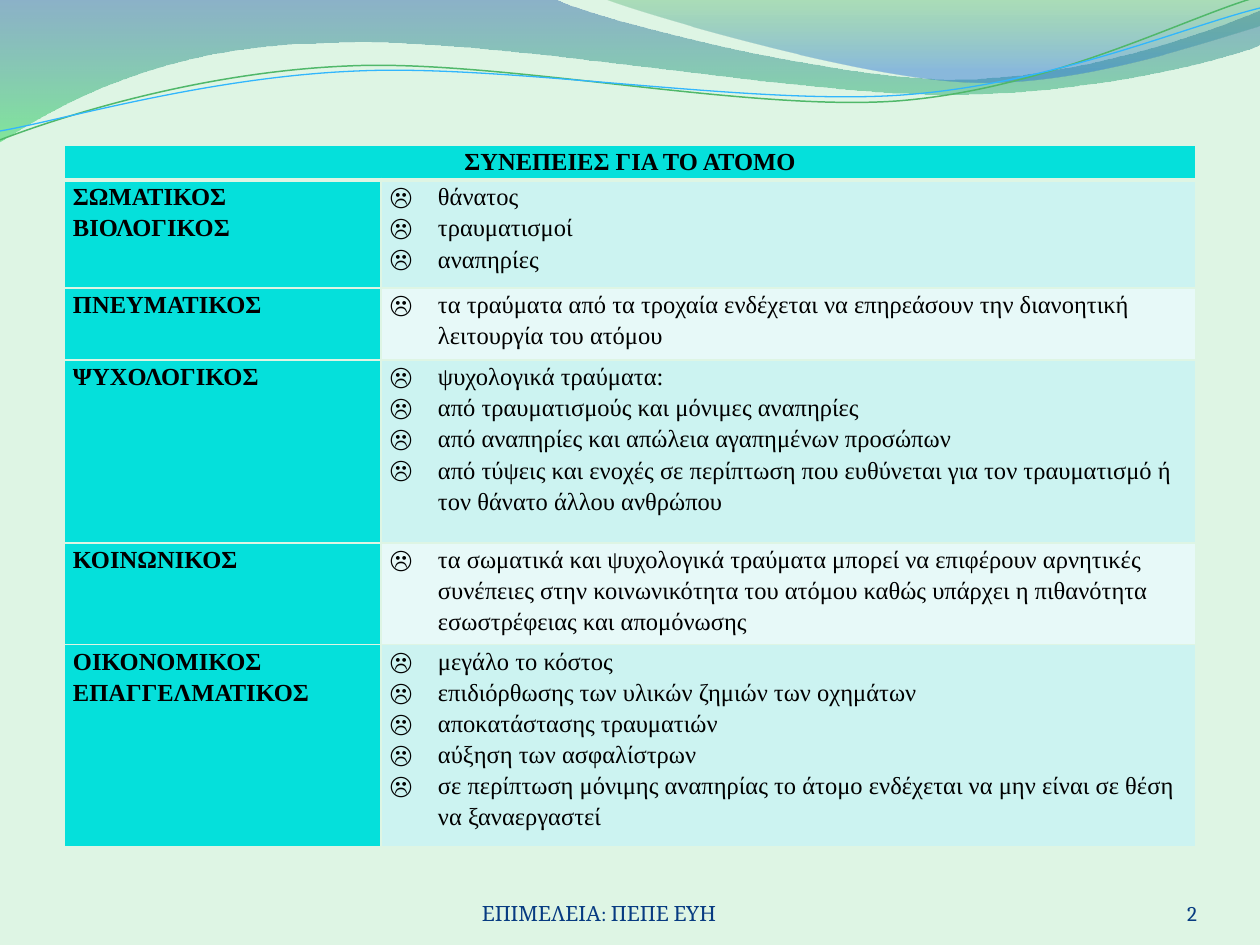
from math import cos, radians, sin

from lxml.etree import Element, SubElement
from pptx import Presentation
from pptx.dml.color import RGBColor
from pptx.enum.text import MSO_ANCHOR as Anchor, PP_ALIGN as Align
from pptx.oxml import parse_xml
from pptx.oxml.ns import nsdecls, qn
from pptx.util import Inches, Pt

SCALE = Inches(10) / 1260
TILT = 2.7
COLORS = {
    "page": "DEF5E4", "label": "05E0DB", "odd": "CCF3F1", "even": "E7F9F8",
    "ink": "000000", "footer": "073B81", "green": "50B86A", "blue": "31B6FD",
}
HEADING = "ΣΥΝΕΠΕΙΕΣ ΓΙΑ ΤΟ ΑΤΟΜΟ"
COLUMNS = [317, 815]
HEADING_HEIGHT = 35
EFFECTS = [
    (108, ["ΣΩΜΑΤΙΚΟΣ", "ΒΙΟΛΟΓΙΚΟΣ"],
     ["θάνατος", "τραυματισμοί", "αναπηρίες"]),
    (72, ["ΠΝΕΥΜΑΤΙΚΟΣ"],
     ["τα τραύματα από τα τροχαία ενδέχεται να επηρεάσουν την διανοητική λειτουργία του ατόμου"]),
    (183, ["ΨΥΧΟΛΟΓΙΚΟΣ"],
     ["ψυχολογικά τραύματα:",
      "από τραυματισμούς και μόνιμες αναπηρίες",
      "από αναπηρίες και απώλεια αγαπημένων προσώπων",
      "από τύψεις και ενοχές σε περίπτωση που ευθύνεται για τον τραυματισμό ή τον θάνατο άλλου ανθρώπου"]),
    (58, ["ΚΟΙΝΩΝΙΚΟΣ"],
     ["τα σωματικά και ψυχολογικά τραύματα μπορεί να επιφέρουν αρνητικές συνέπειες στην "
      "κοινωνικότητα του ατόμου καθώς υπάρχει η πιθανότητα εσωστρέφειας και απομόνωσης"]),
    (168, ["ΟΙΚΟΝΟΜΙΚΟΣ ΕΠΑΓΓΕΛΜΑΤΙΚΟΣ"],
     ["μεγάλο το κόστος",
      "επιδιόρθωσης των υλικών ζημιών των οχημάτων",
      "αποκατάστασης τραυματιών",
      "αύξηση των ασφαλίστρων",
      "σε περίπτωση μόνιμης αναπηρίας το άτομο ενδέχεται να μην είναι σε θέση να ξαναεργαστεί"]),
]
WAVES = [
    ([(0, 0), (554, -1),
      (600, 21, 837, 79, 955, 79), (1075, 79, 1207, 33, 1260, 11), (1261, 45),
      (1239, 55, 1096, 96, 940, 94), (784, 94, 481, 35, 324, 43),
      (163, 45, 58, 105, -1, 142), (0, 0)],
     [(0, "2960A7", 45), (100, "35DA5E", 55)]),
    ([(604, -1), (641, 14, 859, 78, 969, 82),
      (1079, 87, 1211, 40, 1260, 26), (1260, 0), (604, -1)],
     [(0, "36A752", 30), (80, "2472D3", 45)]),
]
STRANDS = [
    ([(0, 140), (60, 117, 199, 72, 349, 66), (498, 59, 747, 112, 898, 101),
      (1050, 89, 1182, 19, 1257, -3)], (629, 72), "green", 0.85),
    ([(0, 131), (59, 121, 207, 77, 357, 71), (508, 64, 752, 106, 903, 95),
      (1053, 84, 1186, 26, 1260, 8)], (629, 74), "blue", 0.75),
]


def px(length):
    """Turn px into EMU."""
    return round(length * SCALE)


def rgb(name):
    """Look up a named colour."""
    return RGBColor.from_string(COLORS[name])


def set_all(target, values):
    """Set attributes from a dict of format values."""
    for name, value in values.items():
        setattr(target, name, value)


def turn(point, pivot, degrees):
    """Turn a point clockwise about a pivot."""
    angle = radians(degrees)
    dx, dy = point[0] - pivot[0], point[1] - pivot[1]
    return (pivot[0] + dx * cos(angle) - dy * sin(angle),
            pivot[1] + dx * sin(angle) + dy * cos(angle))


def add_outline(slide, segments, close, pivot=(0, 0), tilt=0):
    """Draw an outline of lines and cubic curves without shadow."""
    points = [turn(segment[i:i + 2], pivot, tilt)
              for segment in segments for i in range(0, len(segment), 2)]
    points = [(px(x), px(y)) for x, y in points]
    builder = slide.shapes.build_freeform(*points[0])
    builder.add_line_segments(points[1:], close=close)
    outline = builder.convert_to_shape()
    outline.shadow.inherit = False
    outline.fill.background()
    outline.rotation = -tilt % 360
    steps = iter(list(outline.element.iter(qn("a:lnTo"))))
    for segment in segments[1:]:
        first = next(steps)
        if len(segment) == 6:
            curve = Element(qn("a:cubicBezTo"))
            first.addprevious(curve)
            for step in (first, next(steps), next(steps)):
                curve.append(step[0])
                step.getparent().remove(step)
    return outline


def add_wave(slide, segments, stops):
    """Draw a wave with a translucent vertical gradient."""
    wave = add_outline(slide, segments, True)
    wave.line.fill.background()
    stop_xml = "".join(
        f'<a:gs pos="{pos * 1000}"><a:srgbClr val="{color}">'
        f'<a:alpha val="{alpha * 1000}"/></a:srgbClr></a:gs>'
        for pos, color, alpha in stops)
    gradient = parse_xml(
        f'<a:gradFill {nsdecls("a")} rotWithShape="1"><a:gsLst>{stop_xml}</a:gsLst>'
        '<a:lin ang="5400000" scaled="0"/></a:gradFill>')
    properties = wave.element.spPr
    properties.replace(properties.find(qn("a:noFill")), gradient)


def add_strand(slide, segments, pivot, color, width):
    """Draw a thin, slightly tilted curved line."""
    strand = add_outline(slide, segments, False, pivot, TILT)
    strand.line.color.rgb = rgb(color)
    strand.line.width = Pt(width)


def write(frame, lines, font, paragraph_format):
    """Write lines of text as paragraphs."""
    for index, line in enumerate(lines):
        paragraph = frame.paragraphs[0] if index == 0 else frame.add_paragraph()
        set_all(paragraph, paragraph_format)
        run = paragraph.add_run()
        run.text = line
        set_all(run.font, font)
        run.font.color.rgb = rgb("footer" if font["name"] == "Cambria" else "ink")
        paragraph_end = SubElement(paragraph._p, qn("a:endParaRPr"))
        paragraph_end.set("sz", str(round(font["size"].pt * 100)))
        SubElement(paragraph_end, qn("a:latin")).set("typeface", font["name"])


def add_footer(slide, text, box, align):
    """Add a bottom-anchored footer text."""
    frame = slide.shapes.add_textbox(*map(px, box)).text_frame
    set_all(frame, {"word_wrap": True, "vertical_anchor": Anchor.BOTTOM,
                    "margin_left": 0, "margin_right": 0,
                    "margin_top": 0, "margin_bottom": 0})
    write(frame, [text], {"name": "Cambria", "size": Pt(12)}, {"alignment": align})


def add_borders(cell, bottom=1):
    """Edge a cell in the page colour."""
    properties = cell._tc.get_or_add_tcPr()
    widths = {"lnL": 1, "lnR": 1, "lnT": 1, "lnB": bottom}
    for index, (side, width) in enumerate(widths.items()):
        properties.insert(index, parse_xml(
            f'<a:{side} {nsdecls("a")} w="{Pt(width)}"><a:solidFill>'
            f'<a:srgbClr val="{COLORS["page"]}"/></a:solidFill></a:{side}>'))


def fill_cell(cell, lines, color, bold=True, align=Align.LEFT, bottom=1):
    """Fill a table cell with text, colour and borders."""
    set_all(cell, {"margin_left": px(9), "margin_right": px(9),
                   "margin_top": 0, "margin_bottom": 0})
    cell.fill.solid()
    cell.fill.fore_color.rgb = rgb(color)
    write(cell.text_frame, lines,
          {"name": "Times New Roman", "size": Pt(14), "bold": bold},
          {"alignment": align, "line_spacing": 1.15})
    add_borders(cell, bottom)


def add_bullets(cell):
    """Give each paragraph a hanging sad-face bullet."""
    for paragraph in cell.text_frame.paragraphs:
        properties = paragraph._p.get_or_add_pPr()
        properties.set("marL", str(px(48)))
        properties.set("indent", str(-px(48)))
        SubElement(properties, qn("a:buFont")).set("typeface", "Times New Roman")
        SubElement(properties, qn("a:buChar")).set("char", "☹")


def add_effects_table(slide):
    """Build the table of effects on the person."""
    heights = [HEADING_HEIGHT] + [height for height, _, _ in EFFECTS]
    table = slide.shapes.add_table(
        len(heights), len(COLUMNS), px(64), px(145),
        px(sum(COLUMNS)), px(sum(heights))).table
    for column, width in zip(table.columns, COLUMNS):
        column.width = px(width)
    for row, height in zip(table.rows, heights):
        row.height = px(height)
    table.cell(0, 0).merge(table.cell(0, 1))
    fill_cell(table.cell(0, 0), [HEADING], "label", align=Align.CENTER, bottom=3)
    for row, (_, labels, effects) in enumerate(EFFECTS, 1):
        fill_cell(table.cell(row, 0), labels, "label")
        fill_cell(table.cell(row, 1), effects, "odd" if row % 2 else "even", bold=False)
        add_bullets(table.cell(row, 1))


def main():
    """Build and save the slide."""
    deck = Presentation()
    set_all(deck, {"slide_width": px(1260), "slide_height": px(945)})
    slide = deck.slides.add_slide(deck.slide_layouts[6])
    slide.background.fill.solid()
    slide.background.fill.fore_color.rgb = rgb("page")
    for wave in WAVES:
        add_wave(slide, *wave)
    for strand in STRANDS:
        add_strand(slide, *strand)
    add_footer(slide, "ΕΠΙΜΕΛΕΙΑ: ΠΕΠΕ ΕΥΗ", (368, 900, 462, 26), Align.CENTER)
    add_footer(slide, "2", (1092, 876, 105, 50), Align.RIGHT)
    add_effects_table(slide)
    deck.save("out.pptx")


if __name__ == "__main__":
    main()
